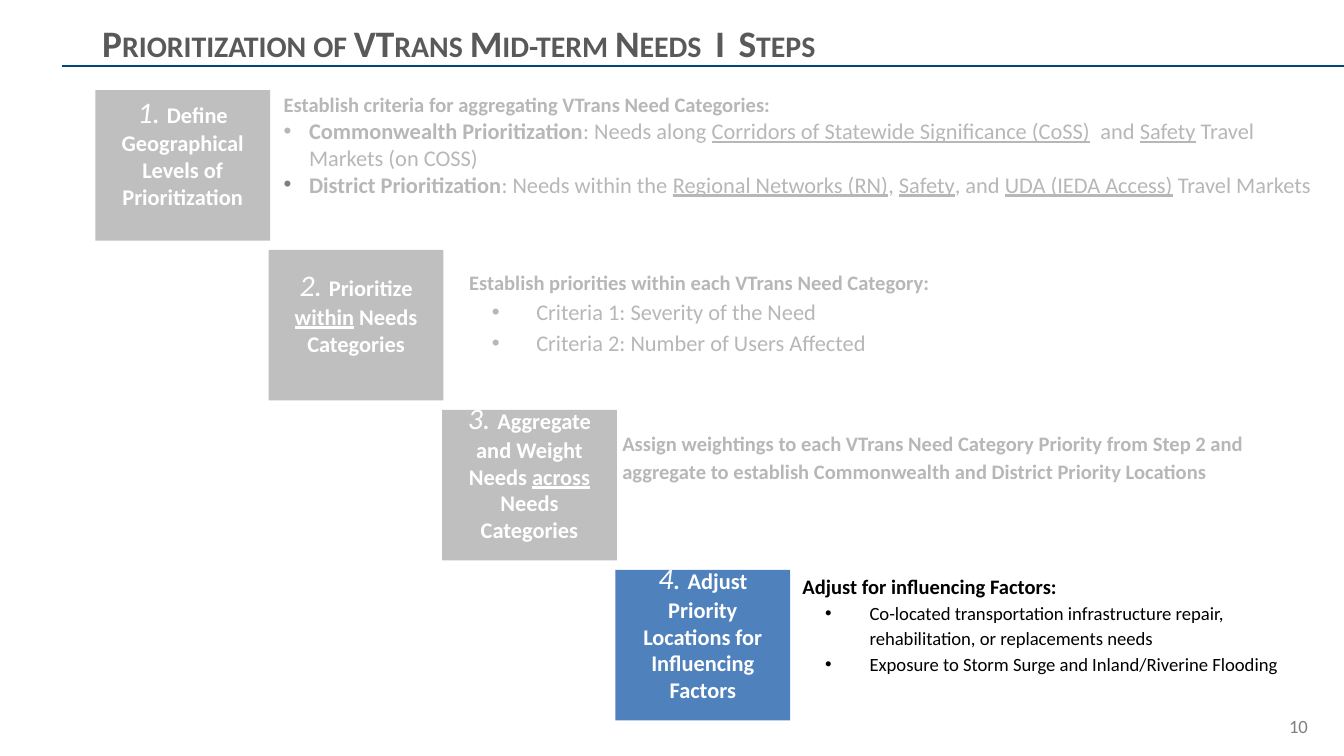
"""Build the slide of four cascading steps for setting priorities."""
from lxml import etree
from pptx import Presentation
from pptx.dml.color import RGBColor
from pptx.enum import shapes, text
from pptx.oxml import ns
from pptx.util import Inches, Pt

HUES = {"rule": "01467A", "title": "595959", "page": "7F7F7F", "dim": "BFBFBF",
        "faint": "B7B7B7", "live": "4F81BD", "white": "FFFFFF", "black": "000000"}

STEPS = [
    [("Define Geographical Levels of Prioritization", "b")],
    [("Prioritize ", "b"), ("within", "bu"), (" Needs Categories", "b")],
    [("Aggregate and Weight Needs ", "b"), ("across", "bu"), (" Needs Categories", "b")],
    [("Adjust Priority Locations for Influencing Factors", "b")],
]

NOTES = [
    {"at": (2.01, 0.61, 7.99, 0.71), "hue": "faint", "size": 12, "pad": 0.19, "hang": 0.19,
     "line": 1, "dots": ["faint", "page"],
     "head": "Establish criteria for aggregating VTrans Need Categories:",
     "list": [
         [("Commonwealth Prioritization", "b"), (": Needs along ", ""),
          ("Corridors of Statewide Significance (CoSS)", "u"), ("  and ", ""),
          ("Safety", "u"), (" Travel Markets (on COSS)", "")],
         [("District Prioritization", "b"), (": Needs within the ", ""),
          ("Regional Networks (RN)", "u"), (", ", ""), ("Safety", "u"), (", and ", ""),
          ("UDA (IEDA Access)", "u"), (" Travel Markets", "")]]},
    {"at": (3.39, 1.93, 6.31, 0.99), "hue": "faint", "size": 12, "pad": 0.5, "hang": 0.33,
     "line": 1.15, "dots": ["faint", "faint"],
     "head": "Establish priorities within each VTrans Need Category:",
     "list": [[("Criteria 1: Severity of the Need", "")],
              [("Criteria 2: Number of Users Affected", "")]]},
    {"at": (4.53, 3.13, 5.2, 0.3), "hue": "faint", "dots": [], "list": [],
     "head": "Assign weightings to each VTrans Need Category Priority from Step 2 and "
             "aggregate to establish Commonwealth and District Priority Locations"},
    {"at": (5.87, 4.19, 4.05, 0.99), "hue": "black", "size": 10, "pad": 0.5, "hang": 0.33,
     "line": 1.15, "dots": ["black", "black"],
     "head": "Adjust for influencing Factors:",
     "list": [[("Co-located transportation infrastructure repair, "
                "rehabilitation, or replacements needs", "")],
              [("Exposure to Storm Surge and Inland/Riverine Flooding", "")]]},
]


def paint(name):
    """Return the named colour."""
    return RGBColor.from_string(HUES[name])


def place(shape, box):
    """Move and size a shape to a box in inches."""
    shape.left, shape.top, shape.width, shape.height = map(Inches, box)


def frame(shape, anchor, side=0.1, edge=0.05, foot=0.05):
    """Prepare the text frame of a shape and return it."""
    body = shape.text_frame
    body.word_wrap = True
    body.auto_size = text.MSO_AUTO_SIZE.NONE
    body.vertical_anchor = anchor
    body.margin_left = body.margin_right = Inches(side)
    body.margin_top, body.margin_bottom = Inches(edge), Inches(foot)
    return body


def write(para, words, size, hue, marks=""):
    """Add one run, with marks b, i and u for bold, italic and underline."""
    run = para.add_run()
    run.text = words
    font = run.font
    font.name, font.size = "Calibri", Pt(size)
    font.color.rgb = paint(hue)
    font.bold, font.italic, font.underline = (m in marks for m in "biu")
    return run


def mark(para, pad=0, hang=0, hue=None):
    """Give a paragraph a coloured bullet, or none if no hue is named."""
    props = para._p.get_or_add_pPr()
    props.set("marL", str(Inches(pad)))
    props.set("indent", str(-Inches(hang)))
    if hue is None:
        etree.SubElement(props, ns.qn("a:buNone"))
        return
    tint = etree.SubElement(props, ns.qn("a:buClr"))
    etree.SubElement(tint, ns.qn("a:srgbClr"), val=HUES[hue])
    etree.SubElement(props, ns.qn("a:buFont"), typeface="Arial")
    etree.SubElement(props, ns.qn("a:buChar"), char="•")


def space(para, line):
    """Align a paragraph left and set its line spacing."""
    para.alignment = text.PP_ALIGN.LEFT
    para.line_spacing = float(line)
    para.space_before = Pt(0)


def add_title(slide):
    """Fill the title and draw the rule below it."""
    shape = slide.shapes.title
    place(shape, (0.69, 0.15, 8.62, 0.34))
    para = frame(shape, text.MSO_ANCHOR.MIDDLE, 0.07, 0.04, 0.04).paragraphs[0]
    para.alignment = text.PP_ALIGN.LEFT
    run = write(para, "Prioritization of VTrans Mid-term Needs  I  Steps", 20, "title", "b")
    run.font._element.set("cap", "small")
    rule = slide.shapes.add_connector(shapes.MSO_CONNECTOR.STRAIGHT, Inches(0.46),
                                      Inches(0.49), Inches(10), Inches(0.49))
    rule.line.color.rgb = paint("rule")
    rule.line.width = Pt(1)
    etree.SubElement(rule._element.spPr, ns.qn("a:effectLst"))


def add_step(slide, rank, runs):
    """Draw one numbered box of the cascade."""
    box = slide.shapes.add_shape(
        shapes.MSO_SHAPE.RECTANGLE, Inches(0.71 + 1.29 * rank),
        Inches(0.67 + 1.19 * rank), Inches(1.3), Inches(1.12))
    box.shadow.inherit = False
    box.fill.solid()
    box.fill.fore_color.rgb = paint("live" if rank == len(STEPS) - 1 else "dim")
    box.line.fill.background()
    para = frame(box, text.MSO_ANCHOR.MIDDLE, foot=0.25).paragraphs[0]
    para.alignment = text.PP_ALIGN.CENTER
    write(para, f"{rank + 1}. ", 16, "white", "i")
    for words, marks in runs:
        write(para, words, 12, "white", marks)


def add_note(shape, note):
    """Fill a body placeholder with a heading and its list."""
    place(shape, note["at"])
    body = frame(shape, text.MSO_ANCHOR.TOP)
    head = body.paragraphs[0]
    mark(head)
    space(head, 1.15)
    write(head, note["head"], 11, note["hue"], "b")
    for runs, dot in zip(note["list"], note["dots"]):
        para = body.add_paragraph()
        mark(para, note["pad"], note["hang"], dot)
        space(para, note["line"])
        for words, marks in runs:
            write(para, words, note["size"], note["hue"], marks)


def add_page(slide):
    """Write the page number."""
    box = slide.shapes.add_textbox(Inches(7.5), Inches(5.25), Inches(2.33), Inches(0.3))
    para = frame(box, text.MSO_ANCHOR.MIDDLE).paragraphs[0]
    para.alignment = text.PP_ALIGN.RIGHT
    write(para, "10", 10, "page")


def main():
    """Build and save the deck."""
    deck = Presentation()
    deck.slide_width = Inches(10)
    deck.slide_height = deck.slide_width * 9 // 16
    slide = deck.slides.add_slide(deck.slide_layouts.get_by_name("Comparison"))
    add_title(slide)
    for rank, runs in enumerate(STEPS):
        add_step(slide, rank, runs)
    for slot, note in enumerate(NOTES, 1):
        add_note(slide.placeholders[slot], note)
    add_page(slide)
    deck.save("out.pptx")


if __name__ == "__main__":
    main()
